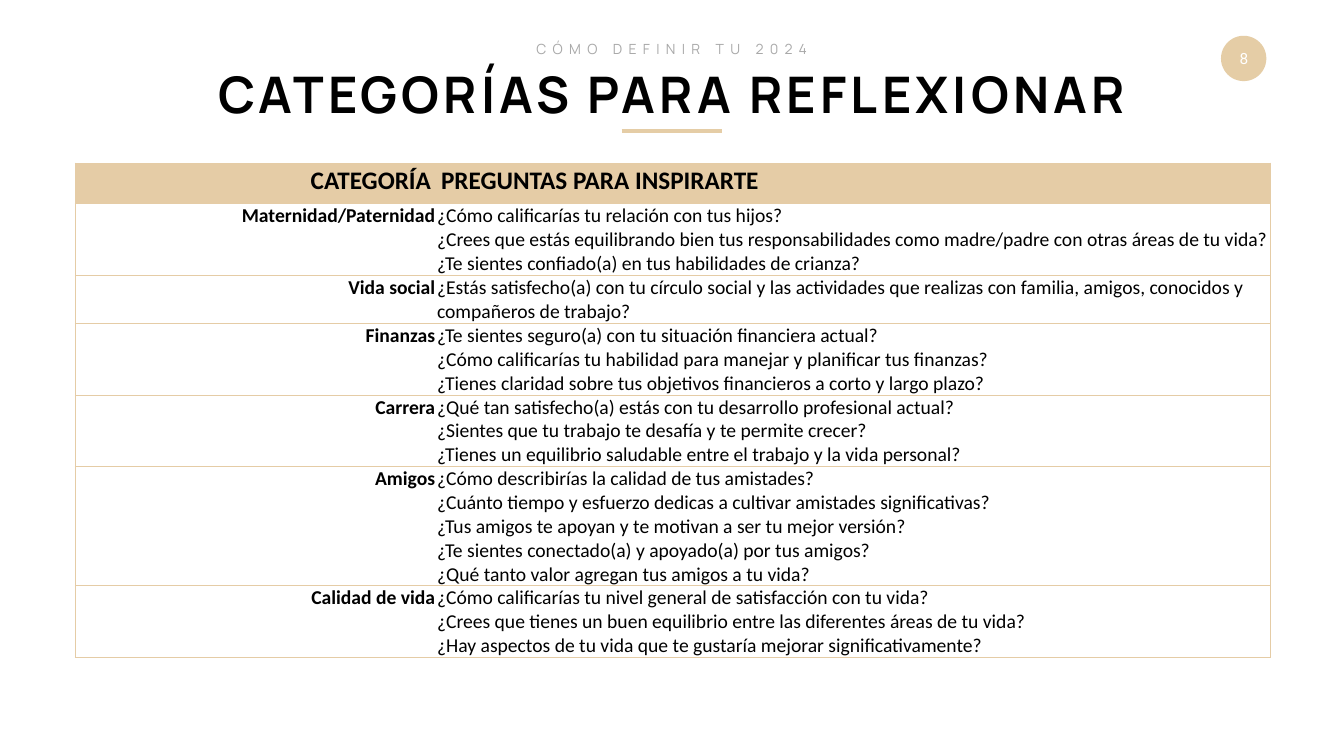
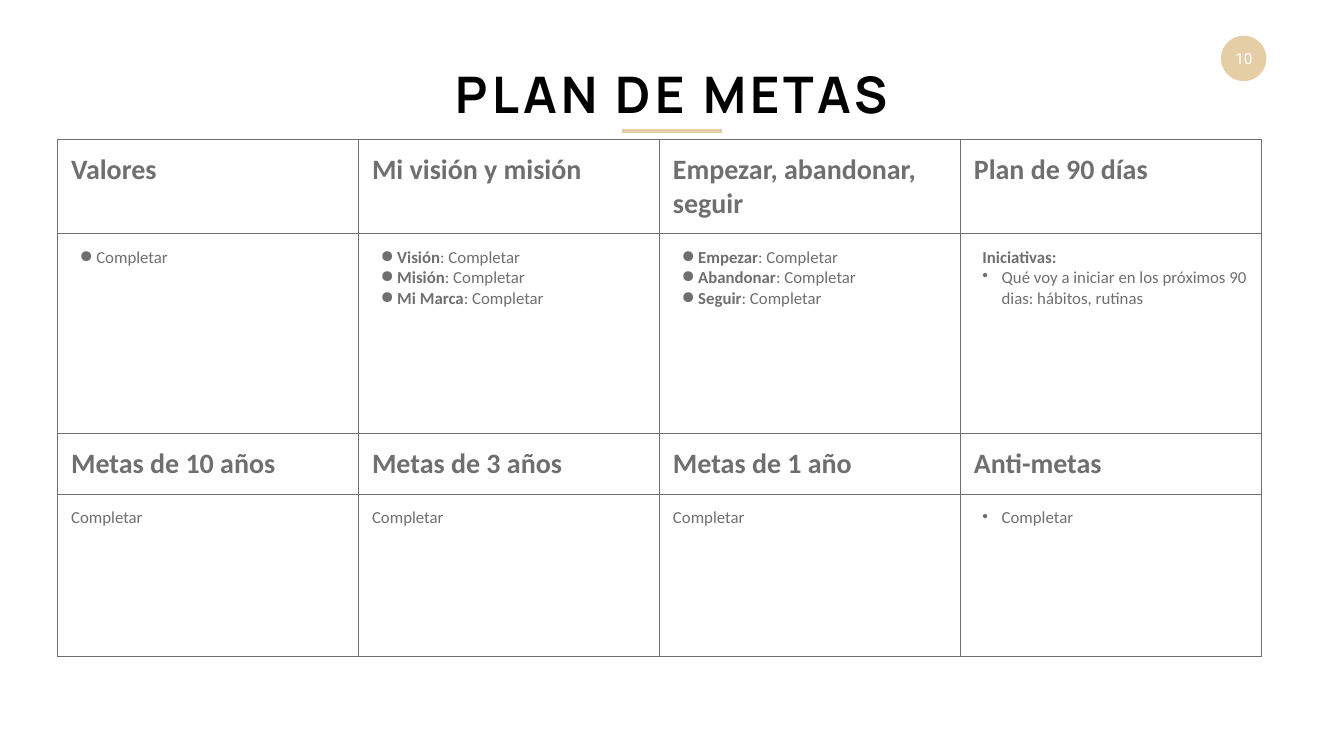
import pptx
import pptx.util
import pptx.dml.color
import pptx.enum.shapes
import pptx.enum.text
import pptx.oxml.ns
import lxml.etree

PX = 9144
SAND = pptx.dml.color.RGBColor(0xE5, 0xCD, 0xA6)
TAN = pptx.dml.color.RGBColor(0xE5, 0xCC, 0xA6)
BLACK = pptx.dml.color.RGBColor(0x00, 0x00, 0x00)
WHITE = pptx.dml.color.RGBColor(0xFF, 0xFF, 0xFF)
SILVER = pptx.dml.color.RGBColor(0xA9, 0xA9, 0xA9)
GRAY = pptx.dml.color.RGBColor(0x6F, 0x6F, 0x6F)
ALIGN = pptx.enum.text.PP_ALIGN
ANCHOR = pptx.enum.text.MSO_ANCHOR
OVAL = pptx.enum.shapes.MSO_SHAPE.OVAL
qn = pptx.oxml.ns.qn


def add_run(paragraph, text, size, color, bold=False, font="Calibri", spacing=0):
    run = paragraph.add_run()
    run.text = text
    run.font.size = pptx.util.Pt(size)
    run.font.color.rgb = color
    run.font.bold = bold
    run.font.name = font
    if spacing:
        run.font._element.set("spc", str(spacing * 100))


def style_cell(cell, sides, color, width, inset_x, inset_y, fill=None):
    properties = cell._tc.get_or_add_tcPr()
    for side in "LRTB":
        line = lxml.etree.SubElement(properties, qn("a:ln" + side), w=str(int(width * 12700)))
        if side in sides:
            solid = lxml.etree.SubElement(line, qn("a:solidFill"))
            lxml.etree.SubElement(solid, qn("a:srgbClr"), val=str(color))
        else:
            lxml.etree.SubElement(line, qn("a:noFill"))
    if fill is None:
        cell.fill.background()
    else:
        cell.fill.solid()
        cell.fill.fore_color.rgb = fill
    cell.margin_left = cell.margin_right = inset_x * PX
    cell.margin_top = cell.margin_bottom = inset_y * PX


deck = pptx.Presentation()
deck.slide_width = 2666 * PX
deck.slide_height = 1500 * PX

pages = [
    ("8", [("CATEGORÍAS PARA REFLEXIONAR", 391, 120, 1885, 131, 72, BLACK, True, 6),
           ("CÓMO DEFINIR TU 2024", 1039, 76, 587, 44, 20, SILVER, False, 9)],
     (149, 323, 2371, 984), [716, 1655], [81] + [41] * 6),
    ("10", [("PLAN DE METAS", 874, 120, 918, 131, 72, BLACK, True, 6)],
     (114, 276, 2388, 1024), [597] * 4, [124, 397, 120, 321]),
]
tables = []
for number, headings, (left, top, width, height), columns, rows in pages:
    slide = deck.slides.add_slide(deck.slide_layouts[6])

    badge = slide.shapes.add_shape(OVAL, 2422 * PX, 71 * PX, 90 * PX, 90 * PX)
    badge.shadow.inherit = False
    badge.fill.solid()
    badge.fill.fore_color.rgb = SAND
    badge.line.fill.background()

    page_number = slide.shapes.add_shape(OVAL, 2435 * PX, 84 * PX, 65 * PX, 65 * PX)
    page_number.shadow.inherit = False
    page_number.fill.background()
    page_number.line.fill.background()
    frame = page_number.text_frame
    frame.margin_left = frame.margin_right = frame.margin_top = frame.margin_bottom = 0
    frame.word_wrap = False
    frame.vertical_anchor = ANCHOR.MIDDLE
    frame.paragraphs[0].alignment = ALIGN.CENTER
    add_run(frame.paragraphs[0], number, 22, WHITE, font="Roboto")

    for text, x, y, w, h, size, color, bold, spacing in headings:
        heading = slide.shapes.add_textbox(x * PX, y * PX, w * PX, h * PX)
        frame = heading.text_frame
        frame.word_wrap = False
        frame.auto_size = pptx.enum.text.MSO_AUTO_SIZE.SHAPE_TO_FIT_TEXT
        paragraph = frame.paragraphs[0]
        paragraph.alignment = ALIGN.CENTER
        if not bold:
            paragraph.space_before = pptx.util.Pt(4)
        add_run(paragraph, text, size, color, bold, "Manrope", spacing)

    underline = slide.shapes.add_connector(
        pptx.enum.shapes.MSO_CONNECTOR.STRAIGHT, 1233 * PX, 260 * PX, 1432 * PX, 260 * PX)
    underline.line.color.rgb = SAND
    underline.line.width = pptx.util.Pt(5)
    lxml.etree.SubElement(underline._element.spPr, qn("a:effectLst"))

    grid = slide.shapes.add_table(len(rows), len(columns), left * PX, top * PX, width * PX, height * PX)
    grid.table.first_row = False
    grid.table.horz_banding = False
    for column, column_width in zip(grid.table.columns, columns):
        column.width = column_width * PX
    for row, row_height in zip(grid.table.rows, rows):
        row.height = row_height * PX
    grid.width = width * PX
    grid.height = height * PX
    tables.append(grid.table)

categories_table, goals_table = tables

categories = [
    ("CATEGORÍA", ["PREGUNTAS PARA INSPIRARTE"]),
    ("Maternidad/Paternidad", [
        "¿Cómo calificarías tu relación con tus hijos?",
        "¿Crees que estás equilibrando bien tus responsabilidades como madre/padre con otras áreas de tu vida?",
        "¿Te sientes confiado(a) en tus habilidades de crianza?"]),
    ("Vida social", [
        "¿Estás satisfecho(a) con tu círculo social y las actividades que realizas con familia, amigos, "
        "conocidos y compañeros de trabajo?"]),
    ("Finanzas", [
        "¿Te sientes seguro(a) con tu situación financiera actual?",
        "¿Cómo calificarías tu habilidad para manejar y planificar tus finanzas?",
        "¿Tienes claridad sobre tus objetivos financieros a corto y largo plazo?"]),
    ("Carrera", [
        "¿Qué tan satisfecho(a) estás con tu desarrollo profesional actual?",
        "¿Sientes que tu trabajo te desafía y te permite crecer?",
        "¿Tienes un equilibrio saludable entre el trabajo y la vida personal?"]),
    ("Amigos", [
        "¿Cómo describirías la calidad de tus amistades?",
        "¿Cuánto tiempo y esfuerzo dedicas a cultivar amistades significativas?",
        "¿Tus amigos te apoyan y te motivan a ser tu mejor versión?",
        "¿Te sientes conectado(a) y apoyado(a) por tus amigos?",
        "¿Qué tanto valor agregan tus amigos a tu vida?"]),
    ("Calidad de vida", [
        "¿Cómo calificarías tu nivel general de satisfacción con tu vida?",
        "¿Crees que tienes un buen equilibrio entre las diferentes áreas de tu vida?",
        "¿Hay aspectos de tu vida que te gustaría mejorar significativamente?"]),
]
for row, (category, questions) in enumerate(categories):
    header = row == 0
    size, inset_x, inset_y, fill = (36, 10, 5, TAN) if header else (28, 2, 1, None)
    category_cell = categories_table.cell(row, 0)
    questions_cell = categories_table.cell(row, 1)
    style_cell(category_cell, "LTB", TAN, 0.5, inset_x, inset_y, fill)
    style_cell(questions_cell, "RTB", TAN, 0.5, inset_x, inset_y, fill)
    if not header:
        questions_cell.vertical_anchor = ANCHOR.BOTTOM
    paragraph = category_cell.text_frame.paragraphs[0]
    paragraph.alignment = ALIGN.RIGHT
    add_run(paragraph, category, size, BLACK, True)
    frame = questions_cell.text_frame
    for index, question in enumerate(questions):
        paragraph = frame.add_paragraph() if index else frame.paragraphs[0]
        add_run(paragraph, question, size, BLACK, header)

indents = {"": (0, 0), "●": (50, -33), "•": (55, -38), "sub": (17, 0)}
plain = [("", "", "Completar")]
goals = [
    [[("", title, "")] for title in
     ("Valores", "Mi visión y misión", "Empezar, abandonar, seguir", "Plan de 90 días")],
    [[("●", "", "Completar")],
     [("●", label, ": Completar") for label in ("Visión", "Misión", "Mi Marca")],
     [("●", label, ": Completar") for label in ("Empezar", "Abandonar", "Seguir")],
     [("sub", "Iniciativas:", ""),
      ("•", "", "Qué voy a iniciar en los próximos 90 dias: hábitos, rutinas")]],
    [[("", title, "")] for title in
     ("Metas de 10 años", "Metas de 3 años", "Metas de 1 año", "Anti-metas")],
    [plain, plain, plain, [("•", "", "Completar")]],
]
for row, goal_row in enumerate(goals):
    size = 24 if row % 2 else 40
    for column, entries in enumerate(goal_row):
        cell = goals_table.cell(row, column)
        style_cell(cell, "LRTB", GRAY, 1, 27, 27)
        for index, (marker, label, detail) in enumerate(entries):
            paragraph = cell.text_frame.add_paragraph() if index else cell.text_frame.paragraphs[0]
            properties = paragraph._p.get_or_add_pPr()
            margin, indent = indents[marker]
            properties.set("marL", str(margin * PX))
            properties.set("indent", str(indent * PX))
            if marker in ("●", "•"):
                bullet_color = lxml.etree.SubElement(properties, qn("a:buClr"))
                lxml.etree.SubElement(bullet_color, qn("a:srgbClr"), val=str(GRAY))
                lxml.etree.SubElement(properties, qn("a:buChar"), char=marker)
            if label:
                add_run(paragraph, label, size, GRAY, True)
            if detail:
                add_run(paragraph, detail, size, GRAY)

deck.save("out.pptx")
